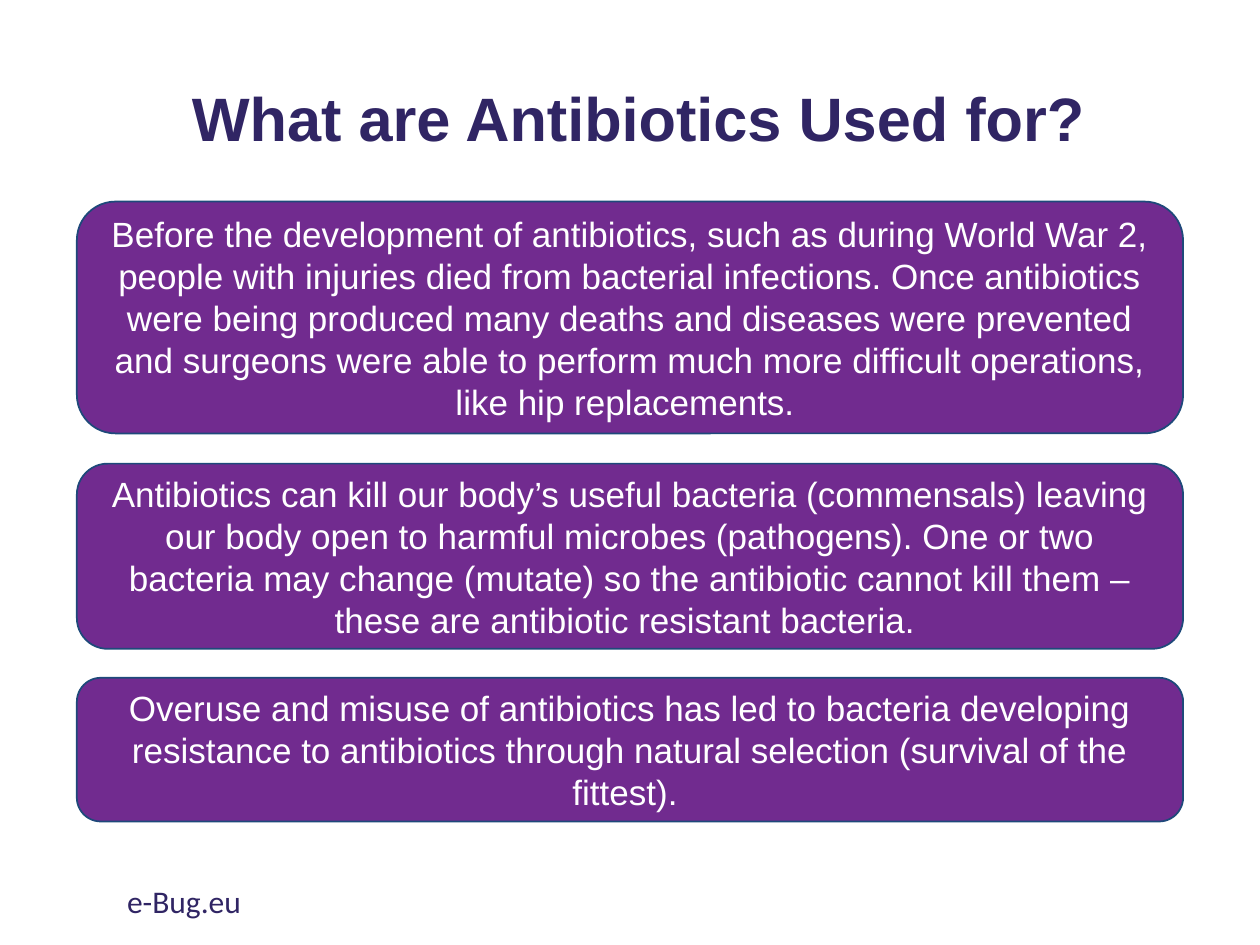
from pptx import Presentation
from pptx.dml.color import RGBColor
from pptx.enum.shapes import MSO_SHAPE
from pptx.enum.text import MSO_ANCHOR, MSO_AUTO_SIZE, PP_ALIGN
from pptx.util import Inches, Pt

NAVY = "302564"
PURPLE = "712B8F"
BLUE = "1E497A"
WHITE = "FFFFFF"

STATEMENTS = [
    (1.6, 1.84, "Before the development of antibiotics, such as during World War 2, "
     "people with injuries died from bacterial infections. Once antibiotics were being "
     "produced many deaths and diseases were prevented and surgeons were able to perform "
     "much more difficult operations, like hip replacements. "),
    (3.68, 1.47, "Antibiotics can kill our body’s useful bacteria (commensals) leaving our "
     "body open to harmful microbes (pathogens). One or two bacteria may change (mutate) so "
     "the antibiotic cannot kill them – these are antibiotic resistant bacteria. "),
    (5.38, 1.14, "Overuse and misuse of antibiotics has led to bacteria developing "
     "resistance to antibiotics through natural selection (survival of the fittest). "),
]


def color(value):
    return RGBColor.from_string(value)


class SlideBuilder:
    """Holds the text style and the slide being built."""

    def __init__(self, slide, font="Arial"):
        self.slide = slide
        self.font = font

    def add_text(self, shape, text, size, text_color, alignment, anchor, font=None, bold=False):
        frame = shape.text_frame
        frame.word_wrap = True
        frame.auto_size = MSO_AUTO_SIZE.NONE
        frame.vertical_anchor = anchor
        paragraph = frame.paragraphs[0]
        paragraph.alignment = alignment
        run = paragraph.add_run()
        run.text = text
        run.font.name = font or self.font
        run.font.size = Pt(size)
        run.font.bold = bold
        run.font.color.rgb = color(text_color)
        return paragraph

    def title(self, text, left, top, width, height):
        shape = self.slide.shapes.title
        shape.left, shape.top = Inches(left), Inches(top)
        shape.width, shape.height = Inches(width), Inches(height)
        paragraph = self.add_text(shape, text, 35, NAVY, PP_ALIGN.CENTER,
                                  MSO_ANCHOR.MIDDLE, bold=True)
        paragraph.line_spacing = 0.9

    def panel(self, text, left, top, width, height):
        shape = self.slide.shapes.add_shape(
            MSO_SHAPE.ROUNDED_RECTANGLE,
            Inches(left), Inches(top), Inches(width), Inches(height))
        shape.shadow.inherit = False
        shape.fill.solid()
        shape.fill.fore_color.rgb = color(PURPLE)
        shape.line.color.rgb = color(BLUE)
        shape.line.width = Pt(1)
        self.add_text(shape, text, 20, WHITE, PP_ALIGN.CENTER, MSO_ANCHOR.MIDDLE)

    def footer(self, text, left, top, width, height):
        shape = self.slide.shapes.add_textbox(
            Inches(left), Inches(top), Inches(width), Inches(height))
        self.add_text(shape, text, 18, NAVY, PP_ALIGN.LEFT, MSO_ANCHOR.TOP, font="Calibri")


def main():
    presentation = Presentation()
    presentation.slide_width = Inches(10)
    presentation.slide_height = Inches(7.5)
    builder = SlideBuilder(presentation.slides.add_slide(presentation.slide_layouts[5]))
    builder.title("What are Antibiotics Used for?", 0.76, 0.51, 8.62, 0.91)
    for top, height, text in STATEMENTS:
        builder.panel(text, 0.61, top, 8.78, height)
    builder.footer("e-Bug.eu", 0.91, 6.95, 3.38, 0.4)
    presentation.save("out.pptx")


if __name__ == "__main__":
    main()
